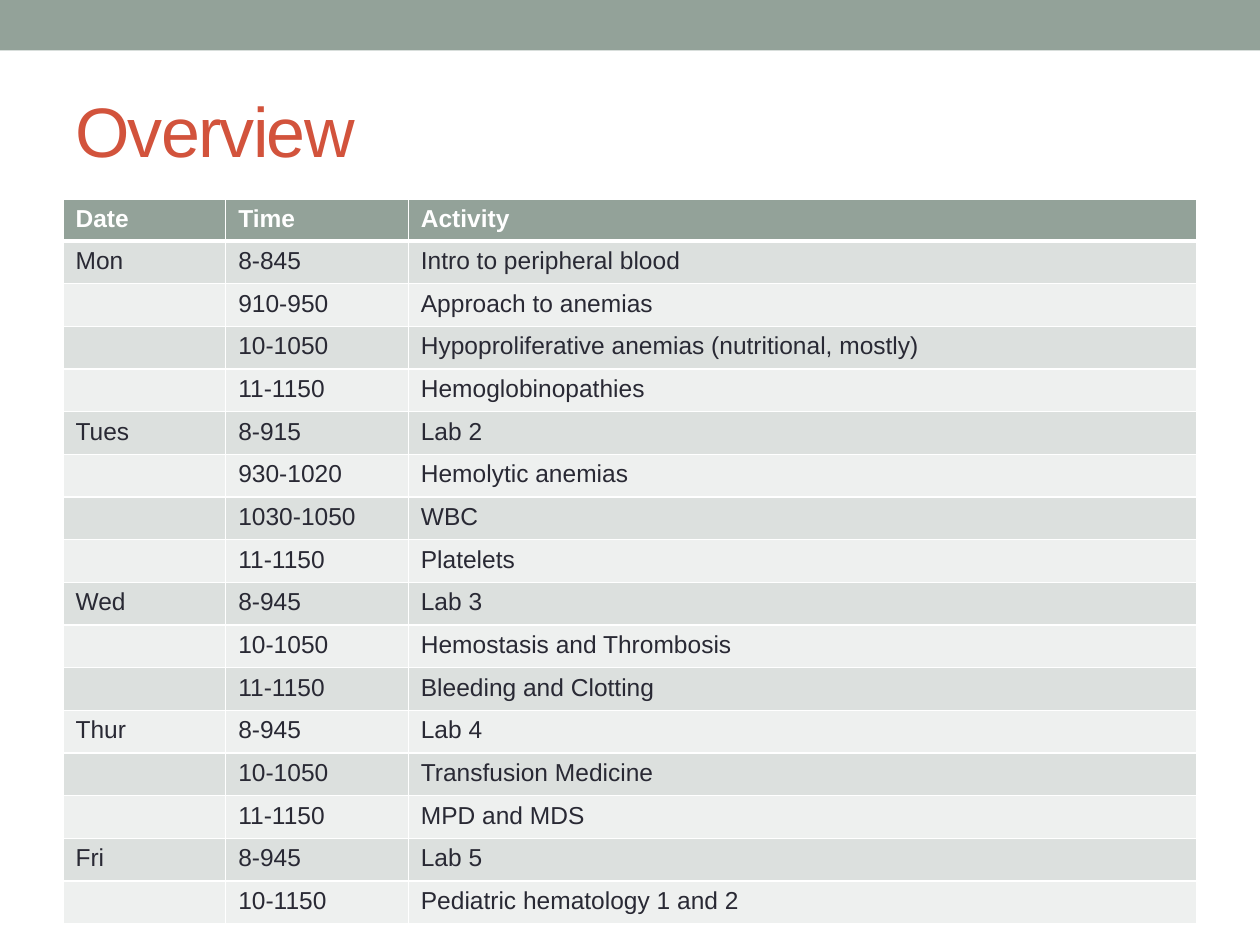
import pptx
import pptx.dml.color
import pptx.enum.shapes
import pptx.enum.text
import pptx.oxml
import pptx.oxml.ns
import pptx.util

Cm, Pt = pptx.util.Cm, pptx.util.Pt

# Content
TITLE = "Overview"
HEADINGS = ("Date", "Time", "Activity")
SCHEDULE = {
    "Mon": [
        ("8-845", "Intro to peripheral blood"),
        ("910-950", "Approach to anemias"),
        ("10-1050", "Hypoproliferative anemias (nutritional, mostly)"),
        ("11-1150", "Hemoglobinopathies"),
    ],
    "Tues": [
        ("8-915", "Lab 2"),
        ("930-1020", "Hemolytic anemias"),
        ("1030-1050", "WBC"),
        ("11-1150", "Platelets"),
    ],
    "Wed": [
        ("8-945", "Lab 3"),
        ("10-1050", "Hemostasis and Thrombosis"),
        ("11-1150", "Bleeding and Clotting"),
    ],
    "Thur": [
        ("8-945", "Lab 4"),
        ("10-1050", "Transfusion Medicine"),
        ("11-1150", "MPD and MDS"),
    ],
    "Fri": [
        ("8-945", "Lab 5"),
        ("10-1150", "Pediatric hematology 1 and 2"),
    ],
}
COLORS = {
    "sage": "93A299",
    "title": "D2533C",
    "text": "292934",
    "white": "FFFFFF",
    "dark band": "DCE0DE",
    "light band": "EEF0EF",
}
FONT = "Arial"
CELL_SIZE = Pt(14)

# Layout
MARGIN = Cm(1.27)
COLUMN_WIDTHS = (Cm(3.28), Cm(3.68), Cm(15.9))
HEADER_HEIGHT, ROW_HEIGHT = Cm(0.71), Cm(0.86)


def rgb(name):
    return pptx.dml.color.RGBColor.from_string(COLORS[name])


def style_font(font, size, color, bold=False):
    font.name, font.size, font.bold = FONT, size, bold
    font.color.rgb = rgb(color)


def add_border(cell, side, width):
    cell._tc.get_or_add_tcPr().append(pptx.oxml.parse_xml(
        f'<a:ln{side} {pptx.oxml.ns.nsdecls("a")} w="{Pt(width)}">'
        f'<a:solidFill><a:srgbClr val="{COLORS["white"]}"/></a:solidFill>'
        f'</a:ln{side}>'))


def fill_cell(cell, text, row):
    header = row == 0
    cell.text_frame.text = text
    paragraph = cell.text_frame.paragraphs[0]
    for run in paragraph.runs:
        style_font(run.font, CELL_SIZE, "white" if header else "text", header)
    if not text:
        # Keep empty cells from stretching their row
        paragraph._p.get_or_add_endParaRPr().set("sz", str(int(CELL_SIZE.pt * 100)))
    add_border(cell, "L", 1)
    add_border(cell, "R", 1)
    if header:
        add_border(cell, "T", 1)
    add_border(cell, "B", 3 if header else 1)
    band = "sage" if header else "dark band" if row % 2 else "light band"
    cell.fill.solid()
    cell.fill.fore_color.rgb = rgb(band)


def main():
    deck = pptx.Presentation()
    deck.slide_width, deck.slide_height = Cm(25.4), Cm(19.05)
    slide = deck.slides.add_slide(deck.slide_layouts[6])

    # Top band
    top_band = slide.shapes.add_shape(
        pptx.enum.shapes.MSO_SHAPE.RECTANGLE, 0, 0, deck.slide_width, Cm(1.02))
    top_band.shadow.inherit = False
    top_band.fill.solid()
    top_band.fill.fore_color.rgb = rgb("sage")
    top_band.line.fill.background()

    # Title
    content_width = deck.slide_width - 2 * MARGIN
    title = slide.shapes.add_textbox(MARGIN, Cm(1.24), content_width, Cm(2.74))
    title.text_frame.word_wrap = True
    title.text_frame.vertical_anchor = pptx.enum.text.MSO_ANCHOR.MIDDLE
    title.text_frame.text = TITLE
    title_font = title.text_frame.paragraphs[0].runs[0].font
    style_font(title_font, Pt(40), "title")
    title_font._element.set("spc", "-100")

    # Timetable: each day is named on its first row only
    rows = [HEADINGS] + [
        (day if i == 0 else "", time, activity)
        for day, sessions in SCHEDULE.items()
        for i, (time, activity) in enumerate(sessions)
    ]
    heights = [HEADER_HEIGHT] + [ROW_HEIGHT] * (len(rows) - 1)
    timetable = slide.shapes.add_table(
        len(rows), len(HEADINGS), MARGIN, Cm(4.01), content_width, sum(heights)).table
    for column, width in zip(timetable.columns, COLUMN_WIDTHS):
        column.width = width
    for r, (values, height) in enumerate(zip(rows, heights)):
        timetable.rows[r].height = height
        for c, text in enumerate(values):
            fill_cell(timetable.cell(r, c), text, r)

    deck.save("out.pptx")


if __name__ == "__main__":
    main()
